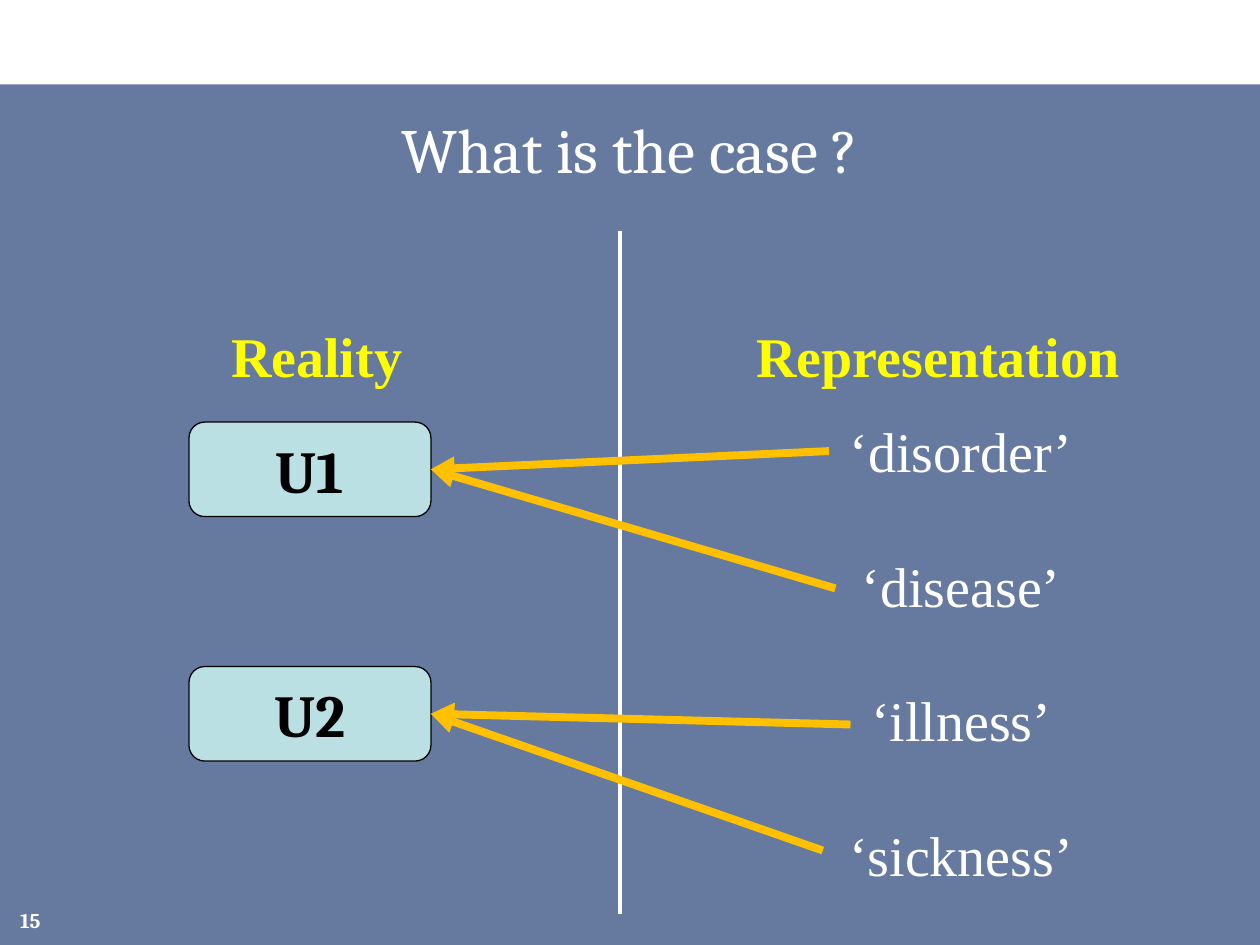
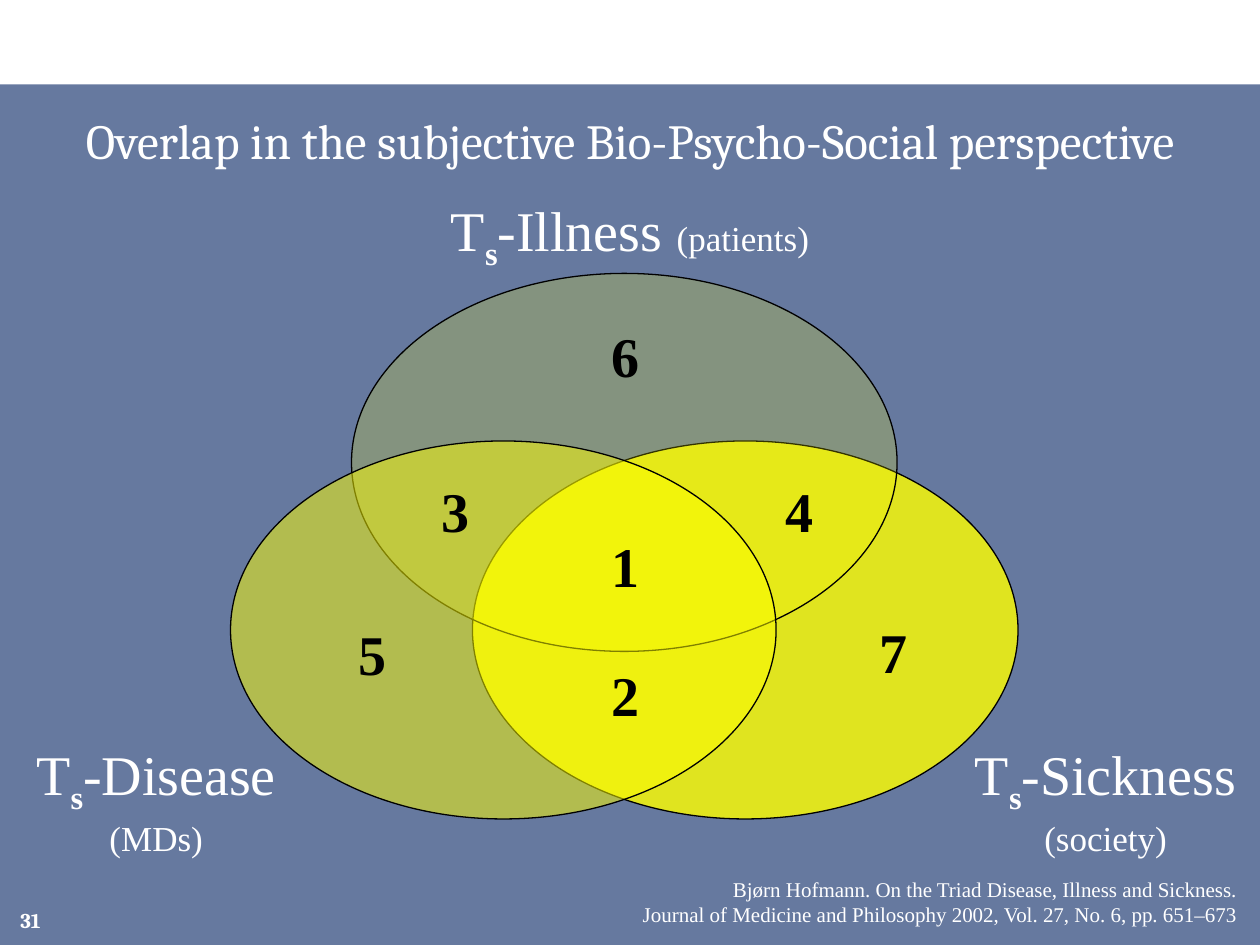
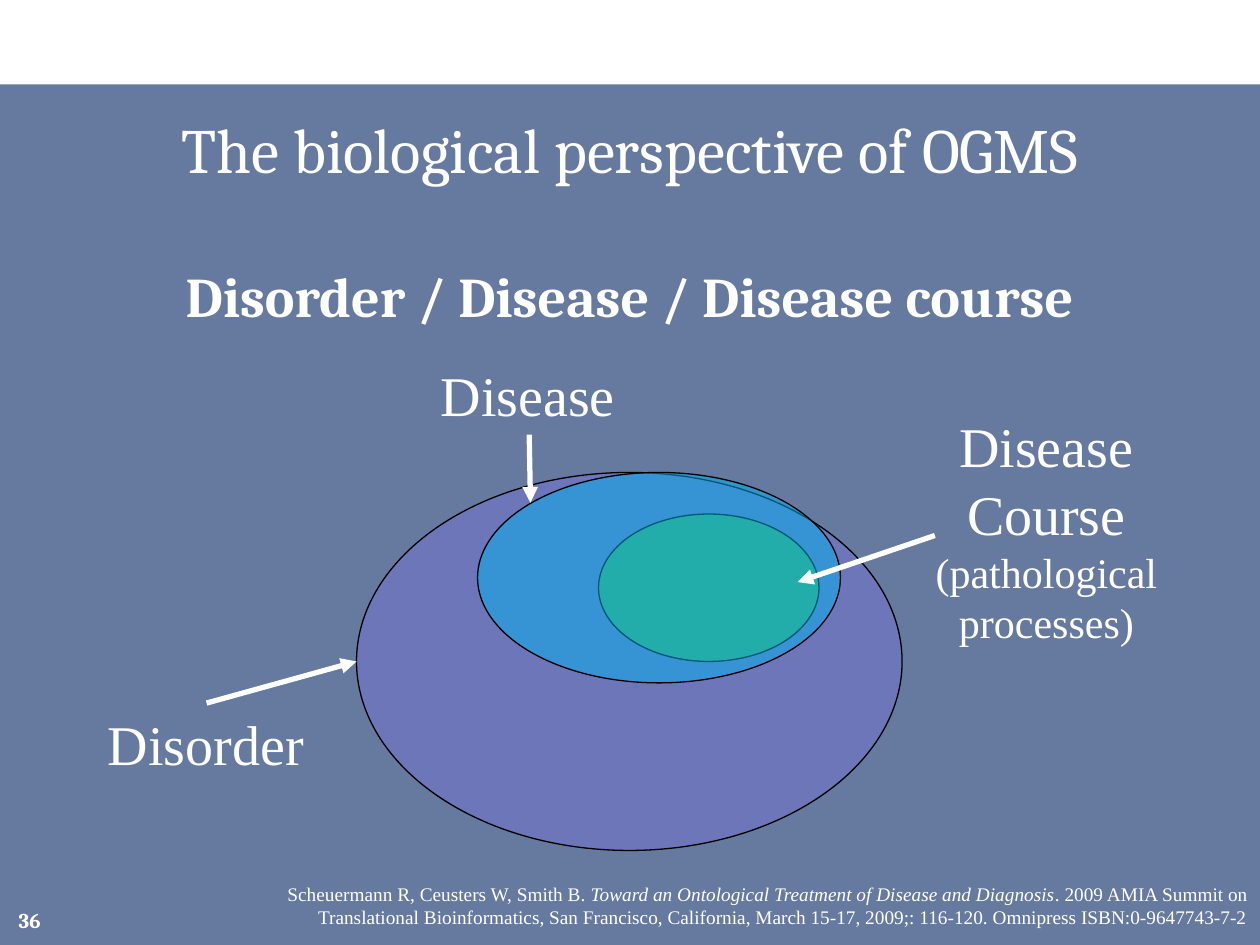
from lxml import etree
from pptx import Presentation
from pptx.dml.color import RGBColor
from pptx.enum.shapes import MSO_CONNECTOR, MSO_SHAPE
from pptx.enum.text import MSO_ANCHOR, MSO_AUTO_SIZE, PP_ALIGN
from pptx.oxml.ns import qn
from pptx.util import Inches, Pt

WHITE = RGBColor(0xFF, 0xFF, 0xFF)
BLACK = RGBColor(0x00, 0x00, 0x00)
NAVY = RGBColor(0x00, 0x20, 0x60)
YELLOW = RGBColor(0xFF, 0xFF, 0x00)
AMBER = RGBColor(0xFF, 0xC0, 0x00)
PALE_TEAL = RGBColor(0xBB, 0xE0, 0xE3)
VIOLET = RGBColor(0x75, 0x75, 0xD1)
GREEN = RGBColor(0x1F, 0xE1, 0x15)
SKY = RGBColor(0x00, 0xB0, 0xF0)

HEAD_FONT, BODY_FONT = "Cambria", "Times New Roman"
LEFT, CENTER, RIGHT = PP_ALIGN.LEFT, PP_ALIGN.CENTER, PP_ALIGN.RIGHT
TOP, MIDDLE = MSO_ANCHOR.TOP, MSO_ANCHOR.MIDDLE
RECT, ROUND, OVAL = MSO_SHAPE.RECTANGLE, MSO_SHAPE.ROUNDED_RECTANGLE, MSO_SHAPE.OVAL
STRAIGHT = MSO_CONNECTOR.STRAIGHT
GROW = MSO_AUTO_SIZE.SHAPE_TO_FIT_TEXT
RIGHT_SIDE = 3


class Deck:
    """Holds the shared style and the current slide."""

    def __init__(self):
        self.prs = Presentation()
        self.prs.slide_width, self.prs.slide_height = Inches(10), Inches(7.5)

    def slide(self, number, title, subtitle=None, size=36):
        self.s = self.prs.slides.add_slide(self.prs.slide_layouts[6])
        self.shape(RECT, 0, 0.67, 10, 6.83, NAVY, alpha=60, outline=False)
        paras = [title]
        if subtitle:
            paras.append([(subtitle, {"size": 32, "bold": True})])
        self.text(paras, 0, 0.83, 10, 0.83, size=size, font=HEAD_FONT,
                  wrap=True, gap=43)
        self.text([str(number)], 0, 7.1, 0.42, 0.4, size=12, font=HEAD_FONT,
                  bold=True, align=RIGHT, anchor=MIDDLE, wrap=True)

    def fill_text(self, tf, paras, size, font, color, bold, align, gap=0):
        """A paragraph is a string or a list of (text, changes) runs."""
        for i, runs in enumerate(paras):
            p = tf.add_paragraph() if i else tf.paragraphs[0]
            p.alignment = align
            if i and gap:
                p.space_before = Pt(gap)
            for text, changes in [(runs, {})] if isinstance(runs, str) else runs:
                r = p.add_run()
                r.text = text
                r.font.name = font
                r.font.color.rgb = color
                r.font.size = Pt(changes.get("size", size))
                r.font.bold = changes.get("bold", bold)
                r.font.italic = changes.get("italic", False)
                if "baseline" in changes:
                    r._r.get_or_add_rPr().set("baseline", str(changes["baseline"]))

    def text(self, paras, x, y, w, h=0.64, size=32, font=BODY_FONT, color=WHITE,
             bold=False, align=CENTER, anchor=TOP, wrap=False, gap=0):
        tf = self.s.shapes.add_textbox(
            Inches(x), Inches(y), Inches(w), Inches(h)).text_frame
        tf.word_wrap = wrap
        tf.vertical_anchor = anchor
        if not wrap:
            tf.auto_size = GROW
        self.fill_text(tf, paras, size, font, color, bold, align, gap)

    def source(self, paras, x, y, w, h, size):
        self.text(paras, x, y, w, h, size=size, align=RIGHT, wrap=True)

    def shape(self, kind, x, y, w, h, color, alpha=100, outline=True, label=None):
        sp = self.s.shapes.add_shape(kind, Inches(x), Inches(y), Inches(w), Inches(h))
        sp.shadow.inherit = False
        sp.fill.solid()
        sp.fill.fore_color.rgb = color
        if alpha < 100:
            clr = sp._element.spPr.find(qn("a:solidFill"))[0]
            etree.SubElement(clr, qn("a:alpha")).set("val", str(alpha * 1000))
        if outline:
            sp.line.color.rgb = BLACK
            sp.line.width = Pt(0.75)
        else:
            sp.line.fill.background()
        if label:
            sp.text_frame.vertical_anchor = MIDDLE
            self.fill_text(sp.text_frame, [label], 34, HEAD_FONT, BLACK, True, CENTER)
        return sp

    def line(self, start, end, color, width, arrow=True, target=None):
        """Draw a line; a target shape is joined at its right side."""
        c = self.s.shapes.add_connector(STRAIGHT, *map(Inches, start + end))
        if target is not None:
            c.end_connect(target, RIGHT_SIDE)
        c.line.color.rgb = color
        c.line.width = Pt(width)
        if arrow:
            ln = c.line._get_or_add_ln()
            etree.SubElement(ln, qn("a:tailEnd")).set("type", "triangle")
        etree.SubElement(c._element.spPr, qn("a:effectLst"))


def case_slide(deck):
    deck.slide(15, "What is the case ?")
    deck.line((4.92, 1.83), (4.92, 7.25), WHITE, 2.25, arrow=False)

    # Column headings and terms
    for heading, x, w in (("Reality", 1.73, 1.57), ("Representation", 5.89, 3.11)):
        deck.text([heading], x, 2.5, w, color=YELLOW, bold=True)
    deck.text(["‘disorder’", "‘disease’", "‘illness’", "‘sickness’"],
              6.63, 3.26, 2, 3.87, gap=38.4)

    # Universals with the terms that point at them
    for name, y, starts in (("U1", 3.35, ((6.58, 3.58), (6.63, 4.67))),
                            ("U2", 5.29, ((6.75, 5.75), (6.53, 6.75)))):
        box = deck.shape(ROUND, 1.5, y, 1.92, 0.75, PALE_TEAL, label=name)
        for start in starts:
            deck.line(start, (3.42, y + 0.375), AMBER, 4.5, target=box)


def overlap_slide(deck):
    deck.slide(31, "Overlap in the subjective Bio-Psycho-Social perspective", size=28)

    # Three overlapping sets
    for x, y, alpha in ((3.75, 3.5, 80), (2.79, 2.17, 20), (1.83, 3.5, 50)):
        deck.shape(OVAL, x, y, 4.33, 3, YELLOW, alpha)

    # Set names
    def term(name):
        return [("T", {}), ("s", {"bold": True, "baseline": -25000}), (name, {})]

    def who(name):
        return [(name, {"size": 20})]

    deck.text([term("-Disease"), who("(MDs)")], 0.17, 5.82, 2.14, 0.98)
    deck.text([term("-Sickness"), who("(society)")], 7.62, 5.82, 2.31, 0.98)
    deck.text([term("-Illness ") + who("(patients)")], 3.46, 1.5, 3.08)

    # Region numbers
    regions = ((4.75, 4.17), (4.75, 5.19), (3.4, 3.73), (6.13, 3.73),
               (2.74, 4.87), (4.75, 2.5), (6.88, 4.85))
    for number, (x, y) in enumerate(regions, 1):
        deck.text([str(number)], x, y, 0.43, color=BLACK, bold=True)

    deck.source(["Bjørn Hofmann. On the Triad Disease, Illness and Sickness.",
                 "Journal of Medicine and Philosophy 2002, Vol. 27, No. 6, pp. 651–673"],
                4.92, 6.91, 5, 0.5, 12)


def biology_slide(deck):
    deck.slide(36, "The biological perspective of OGMS",
               "Disorder / Disease / Disease course")

    # Nested sets: disorder, disease course, disease
    for x, y, w, h, color in ((2.83, 3.75, 4.33, 3, VIOLET),
                              (4.75, 4.08, 1.75, 1.17, GREEN),
                              (3.79, 3.75, 2.88, 1.67, SKY)):
        deck.shape(OVAL, x, y, w, h, color, 50)

    # Labels and their arrows
    deck.text(["Disorder"], 0.75, 5.58, 1.77)
    deck.text(["Disease"], 3.39, 2.81, 1.6)
    deck.text(["Disease", "Course", [("(pathological", {"size": 24})],
               [("processes)", {"size": 24})]], 6.86, 3.22, 2.89, 1.99, wrap=True)
    for start, end in (((1.64, 5.58), (2.83, 5.25)),
                       ((4.2, 3.45), (4.21, 3.99)),
                       ((7.42, 4.25), (6.33, 4.62))):
        deck.line(start, end, WHITE, 3)

    deck.source([[
        ("Scheuermann R, Ceusters W, Smith B. ", {}),
        ("Toward an Ontological Treatment of Disease and Diagnosis", {"italic": True}),
        (". 2009 AMIA Summit on Translational Bioinformatics, San Francisco, "
         "California, March 15-17, 2009;: 116-120. Omnipress ISBN:0-9647743-7-2", {}),
    ]], 1.67, 6.95, 8.33, 0.47, 11)


def main():
    deck = Deck()
    case_slide(deck)
    overlap_slide(deck)
    biology_slide(deck)
    deck.prs.save("out.pptx")


if __name__ == "__main__":
    main()
